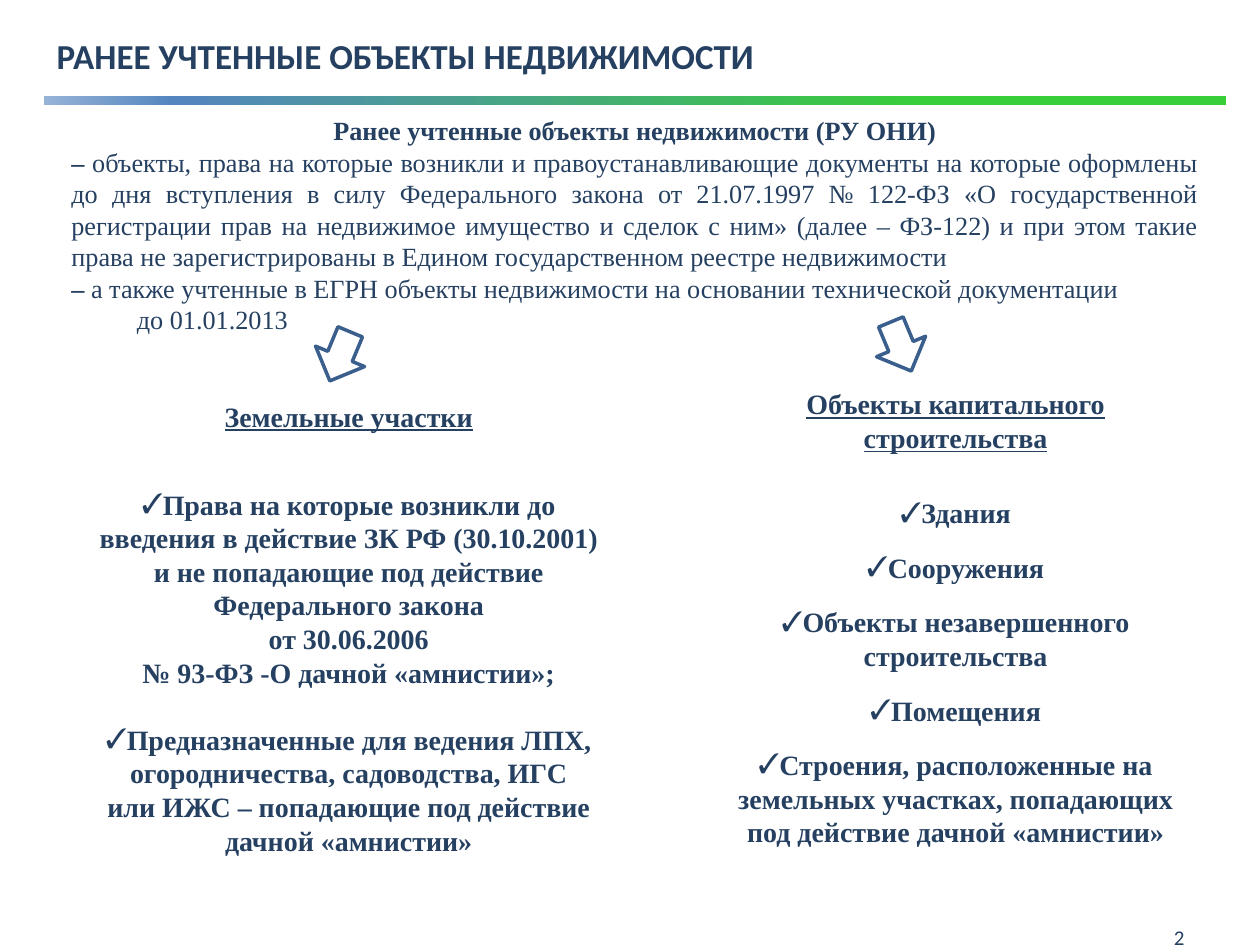
from copy import deepcopy

from lxml import etree
from pptx import Presentation
from pptx.dml.color import RGBColor
from pptx.enum.shapes import MSO_SHAPE
from pptx.enum.text import MSO_ANCHOR, PP_ALIGN
from pptx.oxml.ns import qn
from pptx.util import Cm, Pt

COLORS = {
    "text": "254061",
    "arrow": "3A5F8C",
    "pale_blue": "95B3D7",
    "blue": "5485BF",
    "green": "38CE38",
}
SERIF, SANS = "Times New Roman", "Calibri"
LINE_FACTOR = 1.2


def add_box(left, top, width, height, anchor=MSO_ANCHOR.TOP):
    """Add a wrapping text box, measured in centimetres; return its text frame."""
    box = page.shapes.add_textbox(Cm(left), Cm(top), Cm(width), Cm(height))
    box.text_frame.word_wrap = True
    box.text_frame.vertical_anchor = anchor
    return box.text_frame


def add_text(frame, text, size=16, font=SERIF, bold=True, underline=False,
             align=PP_ALIGN.CENTER, lead="", check=False, before=0, after=0, indent=0):
    """Add one paragraph; lead is a bold opening, check puts a tick bullet."""
    para = frame.paragraphs[0]
    if para.runs:
        para = frame.add_paragraph()
    para.alignment = align
    para.space_before, para.space_after = Pt(before), Pt(after)
    if font == SERIF:
        para.line_spacing = Pt(size * LINE_FACTOR)
    properties = para._p.get_or_add_pPr()
    properties.set("marL", str(Cm(indent)))
    properties.set("indent", "0")
    if check:
        etree.SubElement(properties, qn("a:buFont")).set("typeface", SERIF)
        etree.SubElement(properties, qn("a:buChar")).set("char", "✓")
    for part, weight in ((lead, True), (text, bold)):
        if part:
            span = para.add_run()
            span.text = part
            span.font.name = font
            span.font.size = Pt(size)
            span.font.bold = weight
            span.font.underline = underline
            span.font.color.rgb = RGBColor.from_string(COLORS["text"])


deck = Presentation()
deck.slide_width, deck.slide_height = Cm(25.4), Cm(19.05)
page = deck.slides.add_slide(deck.slide_layouts[6])

# Gradient rule under the title
rule = page.shapes.add_shape(MSO_SHAPE.RECTANGLE, Cm(0.89), Cm(1.93), Cm(23.83), Cm(0.18))
rule.shadow.inherit = False
rule.line.fill.background()
rule.fill.gradient()
rule.fill.gradient_angle = 0
stop_list = rule._element.spPr.find(".//" + qn("a:gsLst"))
stop_list.append(deepcopy(stop_list[-1]))
stops = ((0, "pale_blue"), (0.11, "blue"), (0.75, "green"))
for stop, (position, name) in zip(rule.fill.gradient_stops, stops):
    stop.position = position
    stop.color.rgb = RGBColor.from_string(COLORS[name])

title = add_box(0.89, 0, 23.52, 2.24, MSO_ANCHOR.MIDDLE)
add_text(title, "РАНЕЕ УЧТЕННЫЕ ОБЪЕКТЫ НЕДВИЖИМОСТИ", size=20, font=SANS,
         align=PP_ALIGN.LEFT, after=3)

# Definition
definition = add_box(1.19, 2.18, 23.22, 4.75)
add_text(definition, "Ранее учтенные объекты недвижимости (РУ ОНИ)", size=15)
add_text(
    definition,
    "объекты, права на которые возникли и правоустанавливающие документы на которые "
    "оформлены до дня вступления в силу Федерального закона от 21.07.1997 № 122-ФЗ "
    "«О государственной регистрации прав на недвижимое имущество и сделок с ним» "
    "(далее – ФЗ-122) и при этом такие права не зарегистрированы в Едином "
    "государственном реестре недвижимости",
    size=15, bold=False, align=PP_ALIGN.JUSTIFY, lead="– ")
add_text(
    definition,
    " а также учтенные в ЕГРН объекты недвижимости на основании технической документации",
    size=15, bold=False, align=PP_ALIGN.JUSTIFY, lead="–")
add_text(definition, "до 01.01.2013", size=15, bold=False, align=PP_ALIGN.JUSTIFY, indent=1.32)

# Arrows to the two groups
for left, top, turn in ((6.32, 6.65, 22.6), (17.63, 6.45, 337.4)):
    arrow = page.shapes.add_shape(MSO_SHAPE.DOWN_ARROW, Cm(left), Cm(top), Cm(1.07), Cm(1.07))
    arrow.rotation = turn
    arrow.shadow.inherit = False
    arrow.fill.background()
    arrow.line.color.rgb = RGBColor.from_string(COLORS["arrow"])
    arrow.line.width = Pt(2)

# Land plots
plots = add_box(1.57, 7.92, 10.92, 12.32)
add_text(plots, "Земельные участки", underline=True)
add_text(plots, "Права на которые возникли до введения в действие ЗК РФ (30.10.2001) "
         "и не попадающие под действие Федерального закона", check=True, before=31.2)
add_text(plots, "от 30.06.2006")
add_text(plots, "№ 93-ФЗ -О дачной «амнистии»;")
add_text(plots, "Предназначенные для ведения ЛПХ, огородничества, садоводства, ИГС",
         check=True, before=19.2)
add_text(plots, "или ИЖС – попадающие под действие дачной «амнистии»")

# Capital construction
buildings = add_box(14.3, 7.67, 9.93, 10.34)
add_text(buildings, "Объекты капитального строительства", underline=True, after=12)
for kind in (
    "Здания",
    "Сооружения",
    "Объекты незавершенного строительства",
    "Помещения",
    "Строения, расположенные на земельных участках, попадающих под действие "
    "дачной «амнистии»",
):
    add_text(buildings, kind, check=True, before=12)

page_number = add_box(18.21, 18.39, 5.92, 1.02, MSO_ANCHOR.MIDDLE)
add_text(page_number, "2", size=12, font=SANS, bold=False, align=PP_ALIGN.RIGHT)

deck.save("out.pptx")
